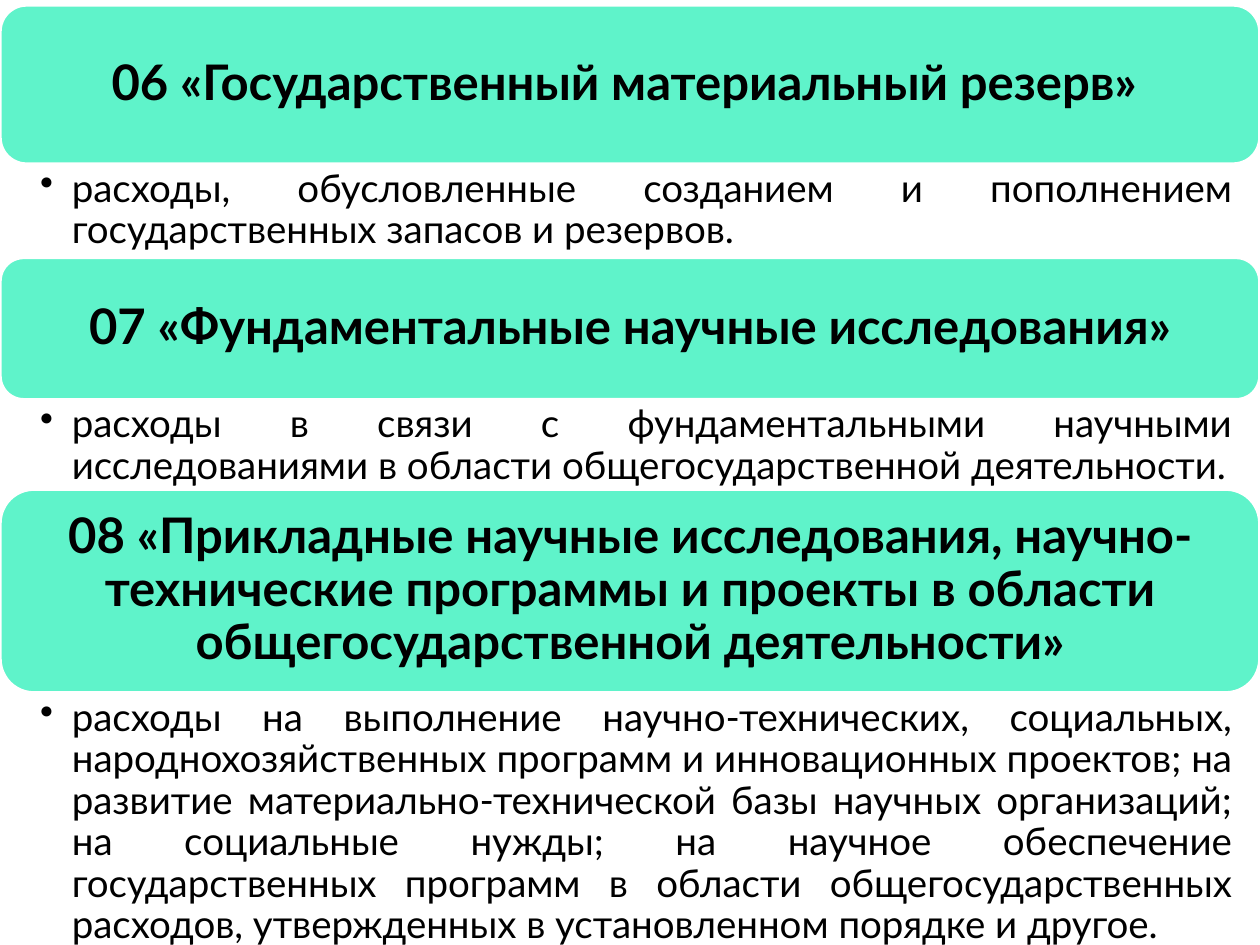
from dataclasses import dataclass

from lxml.etree import SubElement
from pptx import Presentation
from pptx.dml.color import RGBColor
from pptx.enum.shapes import MSO_SHAPE as Shape
from pptx.enum.text import MSO_ANCHOR as Anchor, PP_ALIGN as Align
from pptx.oxml.ns import qn
from pptx.util import Cm, Pt


@dataclass(frozen=True)
class Theme:
    font: str = "Lato"
    heading_size: int = 28
    body_size: int = 22
    line_width: int = 2
    line_spacing: float = 0.9
    text: RGBColor = RGBColor(0x00, 0x00, 0x00)
    band: RGBColor = RGBColor(0x5F, 0xF3, 0xCA)
    border: RGBColor = RGBColor(0xFF, 0xFF, 0xFF)


class SlideBuilder:
    """Draws full-width elements on one slide in the theme's style."""

    def __init__(self, slide, theme, width):
        self.slide, self.theme, self.width = slide, theme, width

    def _write(self, box, text, size, bold, align, anchor, insets):
        frame = box.text_frame
        frame.word_wrap = True
        frame.vertical_anchor = anchor
        horizontal_left, horizontal_right, vertical = insets
        frame.margin_left = Cm(horizontal_left)
        frame.margin_right = Cm(horizontal_right)
        frame.margin_top = frame.margin_bottom = Cm(vertical)
        para = frame.paragraphs[0]
        para.text = text
        para.alignment = align
        para.line_spacing = self.theme.line_spacing
        return para, size, bold

    def _set_font(self, para, size, bold):
        font = para.font
        font.name, font.size, font.bold = self.theme.font, Pt(size), bold
        font.color.rgb = self.theme.text

    def heading(self, text, top, height):
        box = self.slide.shapes.add_shape(
            Shape.ROUNDED_RECTANGLE, 0, Cm(top), self.width, Cm(height))
        box.shadow.inherit = False
        box.fill.solid()
        box.fill.fore_color.rgb = self.theme.band
        box.line.color.rgb = self.theme.border
        box.line.width = Pt(self.theme.line_width)
        self._set_font(*self._write(
            box, text, self.theme.heading_size, True,
            Align.CENTER, Anchor.MIDDLE, (0.3, 0.3, 0.3)))

    def bullet(self, text, top, height):
        box = self.slide.shapes.add_textbox(0, Cm(top), self.width, Cm(height))
        para, size, bold = self._write(
            box, text, self.theme.body_size, False,
            Align.JUSTIFY, Anchor.TOP, (0.81, 0.56, 0.1))
        para.level = 1
        # Hanging bullet
        properties = para._p.get_or_add_pPr()
        indent = Cm(0.64)
        properties.set("marL", str(indent))
        properties.set("indent", str(-indent))
        SubElement(properties, qn("a:buChar")).set("char", "•")
        self._set_font(para, size, bold)


# Heading, heading height, description, description height (cm)
SECTIONS = [
    ("06 «Государственный материальный резерв» ", 3.21,
     "расходы, обусловленные созданием и пополнением государственных "
     "запасов и резервов.", 1.88),
    ("07 «Фундаментальные научные исследования»", 2.87,
     "расходы в связи с фундаментальными научными исследованиями в области "
     "общегосударственной деятельности.", 1.8),
    ("08 «Прикладные научные исследования, научно-технические программы и "
     "проекты в области общегосударственной деятельности»", 4.11,
     "расходы на выполнение научно-технических, социальных, "
     "народнохозяйственных программ и инновационных проектов; на развитие "
     "материально-технической базы научных организаций; на социальные нужды; "
     "на научное обеспечение государственных программ в области "
     "общегосударственных расходов, утвержденных в установленном порядке "
     "и другое.", 4.98),
]


def main():
    deck = Presentation()
    deck.slide_width, deck.slide_height = Cm(25.4), Cm(19.05)
    page = deck.slides.add_slide(deck.slide_layouts[6])
    builder = SlideBuilder(page, Theme(), deck.slide_width)

    # Sections stacked from the top without gaps
    top = 0.1
    for heading, heading_height, description, description_height in SECTIONS:
        builder.heading(heading, top, heading_height)
        top += heading_height
        builder.bullet(description, top, description_height)
        top += description_height

    deck.save("out.pptx")


if __name__ == "__main__":
    main()
